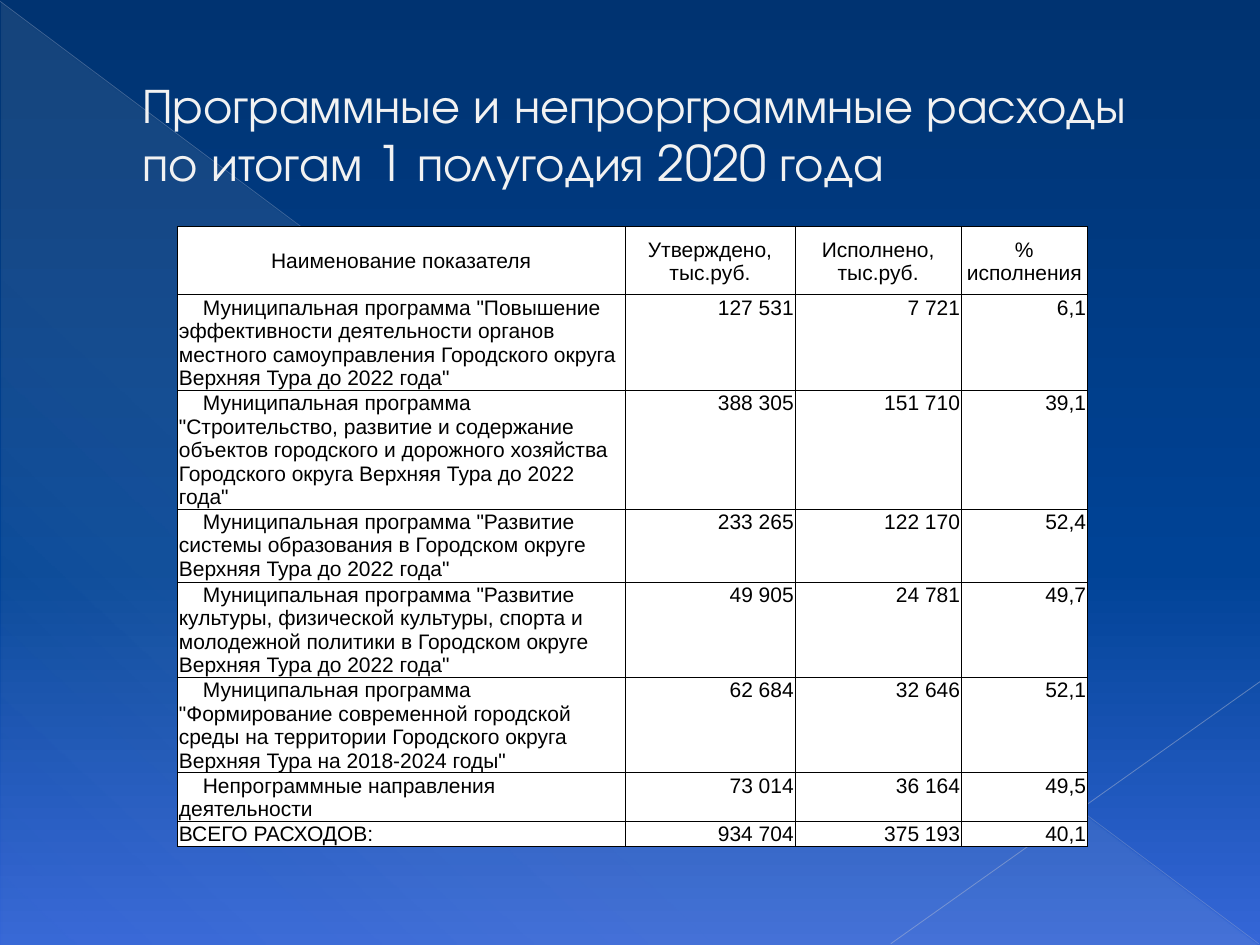
from pptx import Presentation
from pptx import util as u
from pptx.dml.color import RGBColor
from pptx.enum import shapes, text
from pptx.oxml import ns, xmlchemy as xc

W, H = 10, 7.5
NAVY = RGBColor(0x00, 0x33, 0x71)
BLUE = RGBColor(0x00, 0x43, 0x96)
SKY = RGBColor(0x35, 0x66, 0xD7)
CREAM = RGBColor(0xEE, 0xEC, 0xE1)
MIST = RGBColor(0xAD, 0xB6, 0xCE)
HAZE = RGBColor(0xB6, 0xBE, 0xD3)
PALE = RGBColor(0xF2, 0xF2, 0xF2)
EDGE = RGBColor(0x37, 0x59, 0x83)
WHITE = RGBColor(0xFF, 0xFF, 0xFF)
BLACK = RGBColor(0x00, 0x00, 0x00)

TITLE = "Программные и непрорграммные расходы по итогам 1 полугодия 2020 года"
HEAD = ["Наименование показателя", "Утверждено, тыс.руб.",
        "Исполнено, тыс.руб.", "% исполнения"]
PLAN = "Муниципальная программа "
ROWS = [
    HEAD,
    [PLAN + '"Повышение эффективности деятельности органов местного '
     'самоуправления Городского округа Верхняя Тура до 2022 года"',
     "127 531", "7 721", "6,1"],
    [PLAN + '"Строительство, развитие и содержание объектов городского и '
     'дорожного хозяйства Городского округа Верхняя Тура до 2022 года"',
     "388 305", "151 710", "39,1"],
    [PLAN + '"Развитие системы образования в Городском округе '
     'Верхняя Тура до 2022 года"', "233 265", "122 170", "52,4"],
    [PLAN + '"Развитие культуры, физической культуры, спорта и молодежной '
     'политики в Городском округе Верхняя Тура до 2022 года"',
     "49 905", "24 781", "49,7"],
    [PLAN + '"Формирование современной городской среды на территории '
     'Городского округа Верхняя Тура на 2018-2024 годы"',
     "62 684", "32 646", "52,1"],
    ["Непрограммные направления деятельности", "73 014", "36 164", "49,5"],
    ["ВСЕГО РАСХОДОВ:", "934 704", "375 193", "40,1"],
]
COLS = [3.55, 1.35, 1.32, 1]
TALL = [0.54, 0.67, 0.92, 0.58, 0.74, 0.71, 0.33, 0.2]


def put(obj, vals):
    """Set each attribute named in vals."""
    for key, val in vals.items():
        setattr(obj, key, val)


def node(tag, **attrs):
    """Make a drawing element with attributes."""
    item = xc.OxmlElement(tag)
    for key, val in attrs.items():
        item.set(key, str(val))
    return item


def tint(color, alpha=100):
    """Make a colour element with opacity in percent."""
    item = node("a:srgbClr", val=color)
    if alpha < 100:
        item.append(node("a:alpha", val=alpha * 1000))
    return item


def stroke(tag, color, width):
    """Make a solid outline element."""
    line = node(tag, w=int(u.Pt(width)))
    fill = node("a:solidFill")
    fill.append(tint(color))
    line.append(fill)
    return line


def blend(fill, root, stops, angle):
    """Fill with a linear gradient of (place, colour, opacity) stops."""
    fill.gradient()
    grad = next(root.iter(ns.qn("a:gradFill")))
    for old in list(grad):
        grad.remove(old)
    group = node("a:gsLst")
    for place, color, alpha in stops:
        stop = node("a:gs", pos=place * 1000)
        stop.append(tint(color, alpha))
        group.append(stop)
    grad.append(group)
    grad.append(node("a:lin", ang=angle * 60000, scaled=0))


def add_wedge(slide):
    wedge = slide.shapes.add_shape(
        shapes.MSO_SHAPE.RIGHT_TRIANGLE, u.Inches(0.01), u.Inches(0.02),
        u.Inches(W - 0.02), u.Inches(H - 0.02))
    wedge.shadow.inherit = False
    wedge.line.fill.background()
    stops = [(0, CREAM, 10), (70, CREAM, 8), (100, CREAM, 1)]
    blend(wedge.fill, wedge.element, stops, 133)


def add_ray(slide, start, end, color, width, alpha):
    ends = [u.Inches(n) for n in start + end]
    ray = slide.shapes.add_connector(shapes.MSO_CONNECTOR.STRAIGHT, *ends)
    put(ray.line, {"width": u.Pt(width)})
    ray.line.color.rgb = color
    shade = next(ray.element.iter(ns.qn("a:srgbClr")))
    shade.append(node("a:alpha", val=alpha * 1000))
    ray.element.spPr.append(node("a:effectLst"))


def add_title(slide):
    title = slide.shapes.title
    put(title, {"left": u.Inches(0.5), "top": u.Inches(0.29),
                "width": u.Inches(W * 0.9), "height": u.Inches(1.53)})
    title.text = TITLE
    put(title.text_frame, {"word_wrap": True,
                           "auto_size": text.MSO_AUTO_SIZE.NONE,
                           "vertical_anchor": text.MSO_ANCHOR.MIDDLE})
    para = title.text_frame.paragraphs[0]
    para.alignment = text.PP_ALIGN.LEFT
    prop = para._p.get_or_add_pPr()
    prop.set("marL", str(int(u.Inches(0.53))))
    prop.set("indent", "0")
    font = para.runs[0].font
    put(font, {"size": u.Pt(28), "name": "TeX Gyre Adventor"})
    font.color.rgb = PALE
    para.runs[0]._r.get_or_add_rPr().insert(0, stroke("a:ln", EDGE, 0.5))
    # Bring the title in front of the backdrop
    title.element.getparent().append(title.element)


def fill_cell(cell, words, align, anchor, indent):
    cell.text = words
    put(cell, {"vertical_anchor": anchor, "margin_left": u.Inches(0.01),
               "margin_right": u.Inches(0.01), "margin_top": u.Inches(0.01),
               "margin_bottom": 0})
    cell.fill.solid()
    cell.fill.fore_color.rgb = WHITE
    para = cell.text_frame.paragraphs[0]
    para.alignment = align
    if indent:
        para._p.get_or_add_pPr().set("indent", str(int(u.Inches(indent))))
    font = para.runs[0].font
    put(font, {"size": u.Pt(12), "name": "Arial", "bold": False})
    font.color.rgb = BLACK
    for spot, side in enumerate("LRTB"):
        edge = stroke("a:ln" + side, BLACK, 0.5)
        cell._tc.get_or_add_tcPr().insert(spot, edge)


def add_grid(slide):
    frame = slide.shapes.add_table(
        len(ROWS), len(COLS), u.Inches(1.41), u.Inches(1.8),
        u.Inches(sum(COLS)), u.Inches(sum(TALL)))
    table = frame.table
    put(table, {"first_row": False, "horz_banding": False})
    for col, width in zip(table.columns, COLS):
        col.width = u.Inches(width)
    for row, height in zip(table.rows, TALL):
        row.height = u.Inches(height)
    last = len(ROWS) - 1
    for r, row in enumerate(ROWS):
        for c, words in enumerate(row):
            align = text.PP_ALIGN.RIGHT if c else text.PP_ALIGN.LEFT
            anchor, indent = text.MSO_ANCHOR.TOP, 0
            if r == 0:
                align, anchor = text.PP_ALIGN.CENTER, text.MSO_ANCHOR.MIDDLE
            elif c == 0 and r == last:
                anchor = text.MSO_ANCHOR.BOTTOM
            elif c == 0:
                indent = 0.19
            fill_cell(table.cell(r, c), words, align, anchor, indent)


def main():
    deck = Presentation()
    put(deck, {"slide_width": u.Inches(W), "slide_height": u.Inches(H)})
    slide = deck.slides.add_slide(deck.slide_layouts[5])
    # Backdrop
    stops = [(0, NAVY, 100), (60, BLUE, 100), (100, SKY, 100)]
    blend(slide.background.fill, slide.element, stops, 90)
    add_wedge(slide)
    add_ray(slide, (0, 0.01), (9.99, 7.49), MIST, 0.39, 35)
    add_ray(slide, (10, 5.41), (7.07, 7.49), HAZE, 0.47, 45)
    # Content
    add_title(slide)
    add_grid(slide)
    deck.save("out.pptx")


if __name__ == "__main__":
    main()
